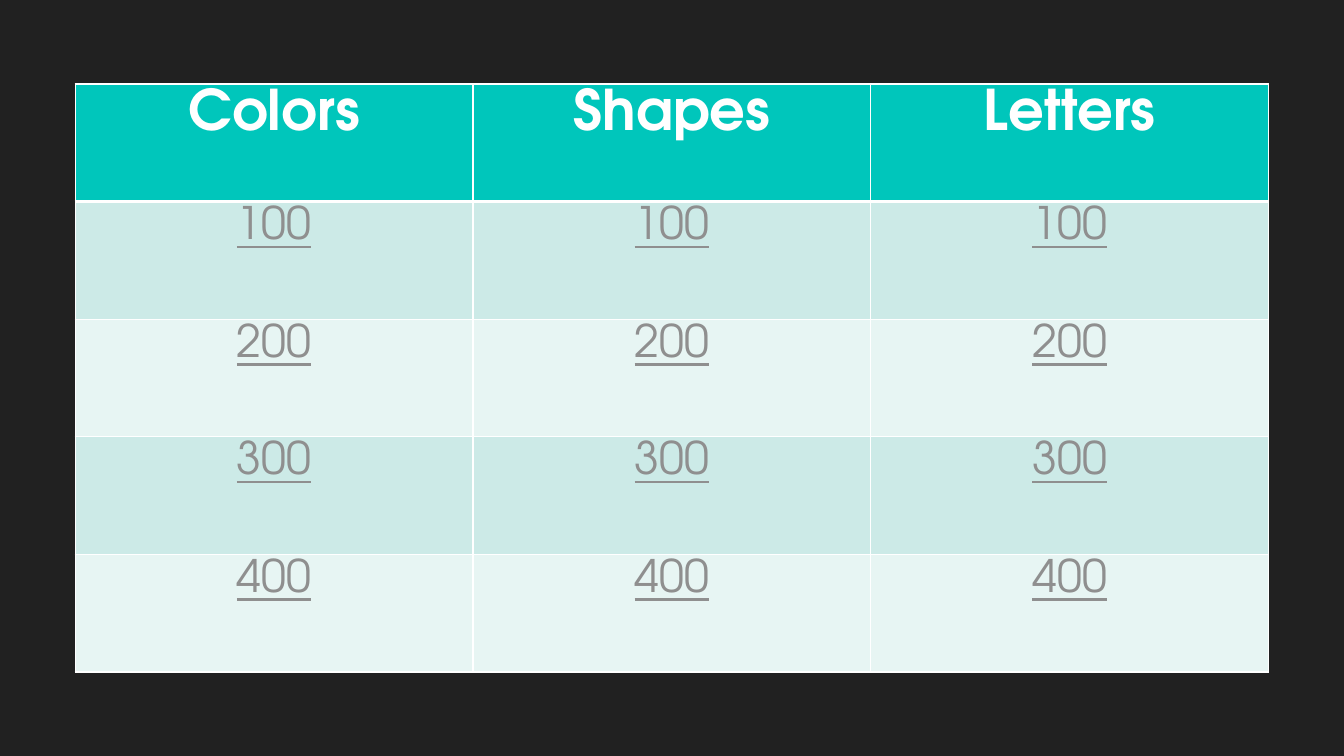
from dataclasses import dataclass

import pptx
import pptx.dml.color
import pptx.enum.text
import pptx.oxml
import pptx.oxml.ns
import pptx.util

Pt = pptx.util.Pt


@dataclass(frozen=True)
class Theme:
    font: str = "TeX Gyre Adventor"
    background: str = "212121"
    header_fill: str = "00C6BB"
    band_fills: tuple = ("CCEAE7", "E7F5F3")
    header_text: str = "FFFFFF"
    points_text: str = "8F8F8F"
    border: str = "FFFFFF"
    header_size: int = 40
    points_size: int = 32
    thin: int = 1
    thick: int = 3


THEME = Theme()
CATEGORIES = ("Colors", "Shapes", "Letters")
POINTS = (100, 200, 300, 400)


def color(value):
    return pptx.dml.color.RGBColor.from_string(value)


def set_borders(cell, top, bottom):
    """Draw all four sides; borders must precede the fill in the cell XML."""
    properties = cell._tc.get_or_add_tcPr()
    widths = {"lnL": THEME.thin, "lnR": THEME.thin, "lnT": top, "lnB": bottom}
    for index, (side, width) in enumerate(widths.items()):
        line = pptx.oxml.parse_xml(
            f'<a:{side} {pptx.oxml.ns.nsdecls("a")} w="{Pt(width)}">'
            f'<a:solidFill><a:srgbClr val="{THEME.border}"/></a:solidFill></a:{side}>'
        )
        properties.insert(index, line)


def fill_cell(cell, text, row):
    header = row == 0
    cell.fill.solid()
    cell.fill.fore_color.rgb = color(
        THEME.header_fill if header else THEME.band_fills[(row - 1) % 2]
    )
    set_borders(
        cell,
        top=THEME.thick if row == 1 else THEME.thin,
        bottom=THEME.thick if header else THEME.thin,
    )
    para = cell.text_frame.paragraphs[0]
    para.text = text
    para.alignment = pptx.enum.text.PP_ALIGN.CENTER
    font = para.runs[0].font
    font.name = THEME.font
    font.size = Pt(THEME.header_size if header else THEME.points_size)
    font.bold = header
    font.underline = not header
    font.color.rgb = color(THEME.header_text if header else THEME.points_text)


def add_game_board(page, left, top, width, height):
    rows = [CATEGORIES] + [[str(points)] * len(CATEGORIES) for points in POINTS]
    board = page.shapes.add_table(
        len(rows), len(CATEGORIES), Pt(left), Pt(top), Pt(width), Pt(height)
    ).table
    for row, texts in enumerate(rows):
        for column, text in enumerate(texts):
            fill_cell(board.cell(row, column), text, row)


def main():
    deck = pptx.Presentation()
    deck.slide_width, deck.slide_height = Pt(960), Pt(540)
    page = deck.slides.add_slide(deck.slide_layouts[6])
    page.background.fill.solid()
    page.background.fill.fore_color.rgb = color(THEME.background)
    add_game_board(page, left=53.75, top=60, width=852.5, height=420)
    deck.save("out.pptx")


if __name__ == "__main__":
    main()
